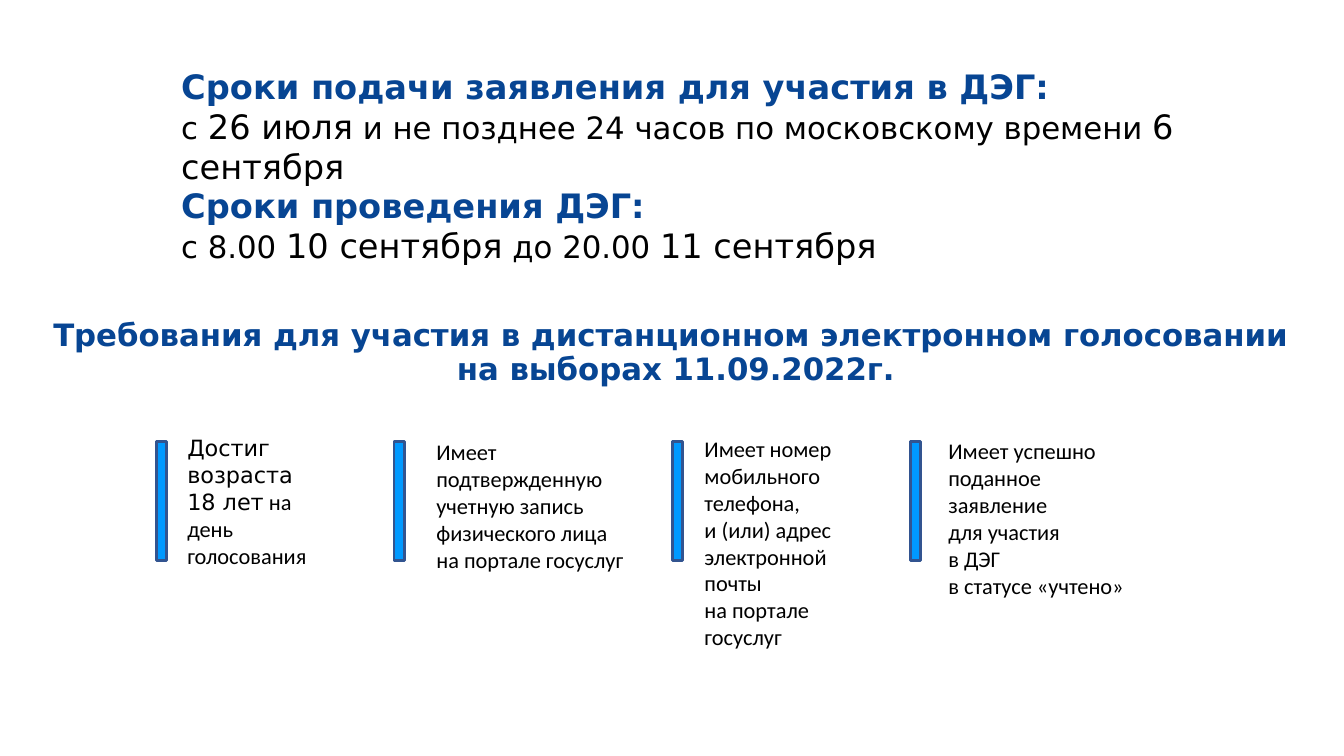
from pptx import Presentation
from pptx.dml.color import RGBColor
from pptx.enum.shapes import MSO_SHAPE
from pptx.enum.text import MSO_AUTO_SIZE, PP_ALIGN
from pptx.util import Pt

WIDE_FONT = "DejaVu Sans"
BODY_FONT = "Calibri"
BLUE = "074593"
BLACK = "000000"
BAR_FILL = "0099FF"
BAR_LINE = "325490"

DEADLINES = [
    (43.2, 806.4, "Сроки подачи заявления для участия в ДЭГ:", [
        ("с ", 22),
        ("26 июля", 24),
        (" и не позднее 24 часов по московскому времени ", 22),
        ("6 сентября", 24),
    ]),
    (128.2, 731.5, "Сроки проведения ДЭГ:", [
        ("с 8.00 ", 22),
        ("10 сентября", 24),
        (" до 20.00 ", 22),
        ("11 сентября", 24),
    ]),
]

REQUIREMENTS = [
    (111.6, (126.7, 306.7, 120.2, 103), [
        [("Достиг возраста", WIDE_FONT)],
        [("18 лет", WIDE_FONT), (" на день голосования", BODY_FONT)],
    ]),
    (281.5, (304.6, 309.6, 157.7, 122.4), [
        [("Имеет подтвержденную учетную запись физического лица", BODY_FONT)],
        [("на портале госуслуг", BODY_FONT)],
    ]),
    (480.2, (496.1, 307.4, 114.5, 161.3), [
        [("Имеет номер мобильного", BODY_FONT)],
        [("телефона,", BODY_FONT)],
        [("и (или) адрес электронной почты", BODY_FONT)],
        [("на портале госуслуг", BODY_FONT)],
    ]),
    (650.2, (670.3, 308.9, 145.4, 141.8), [
        [("Имеет успешно поданное заявление", BODY_FONT)],
        [("для участия", BODY_FONT)],
        [("в ДЭГ", BODY_FONT)],
        [("в статусе «учтено»", BODY_FONT)],
    ]),
]


def color(value):
    return RGBColor.from_string(value)


def add_text(page, box, paragraphs, grow=True):
    frame = page.shapes.add_textbox(*map(Pt, box)).text_frame
    frame.word_wrap = True
    frame.auto_size = MSO_AUTO_SIZE.SHAPE_TO_FIT_TEXT if grow else MSO_AUTO_SIZE.NONE
    for index, spans in enumerate(paragraphs):
        para = frame.add_paragraph() if index else frame.paragraphs[0]
        for text, font, size, tint, bold in spans:
            span = para.add_run()
            span.text = text
            span.font.name = font
            span.font.size = Pt(size)
            span.font.bold = bold
            span.font.color.rgb = color(tint)
    return frame


def add_deadline(page, box, title, dates):
    heading = [(title, WIDE_FONT, 24, BLUE, True)]
    details = [(text, WIDE_FONT, size, BLACK, False) for text, size in dates]
    add_text(page, box, [heading, details])


def add_heading(page, box):
    lines = [
        "Требования для участия в дистанционном электронном голосовании ",
        "на выборах 11.09.2022г.",
    ]
    frame = add_text(page, box, [[(line, WIDE_FONT, 22, BLUE, True)] for line in lines], grow=False)
    frame.margin_top = Pt(26.5)
    for para in frame.paragraphs:
        para.alignment = PP_ALIGN.CENTER
        para.line_spacing = 0.9


def add_requirement(page, bar_left, box, paragraphs):
    bar = page.shapes.add_shape(MSO_SHAPE.RECTANGLE, Pt(bar_left), Pt(315.4), Pt(7.2), Pt(85))
    bar.shadow.inherit = False
    bar.fill.solid()
    bar.fill.fore_color.rgb = color(BAR_FILL)
    bar.line.color.rgb = color(BAR_LINE)
    bar.line.width = Pt(2)
    add_text(page, box, [
        [(text, font, 16, BLACK, False) for text, font in spans] for spans in paragraphs
    ])


def main():
    deck = Presentation()
    deck.slide_width, deck.slide_height = Pt(960), Pt(540)
    page = deck.slides.add_slide(deck.slide_layouts[6])
    for top, width, title, dates in DEADLINES:
        add_deadline(page, (122.4, top, width, 64.8), title, dates)
    add_heading(page, (20.9, 202.3, 923.8, 78))
    for bar_left, box, paragraphs in REQUIREMENTS:
        add_requirement(page, bar_left, box, paragraphs)
    deck.save("out.pptx")


if __name__ == "__main__":
    main()
